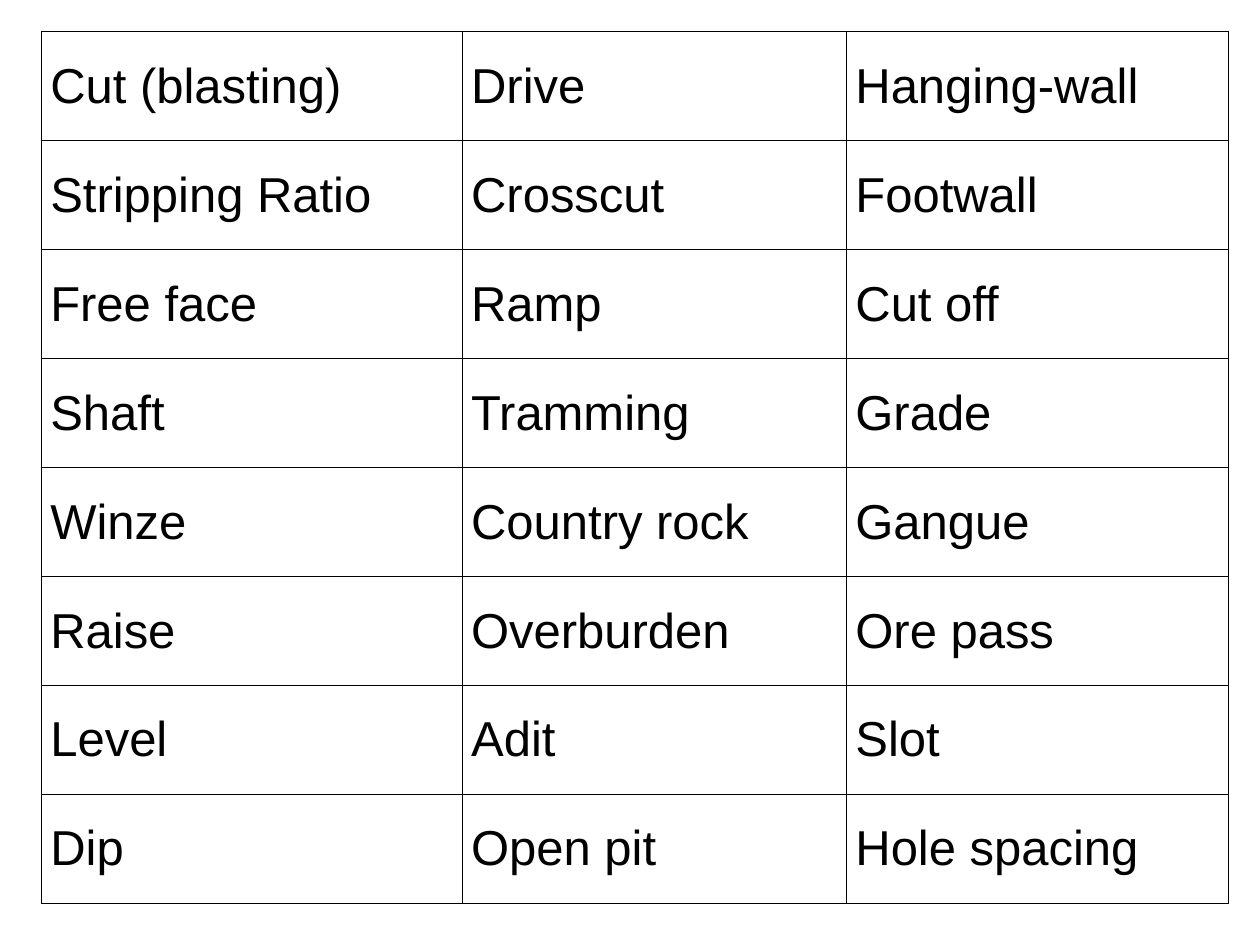
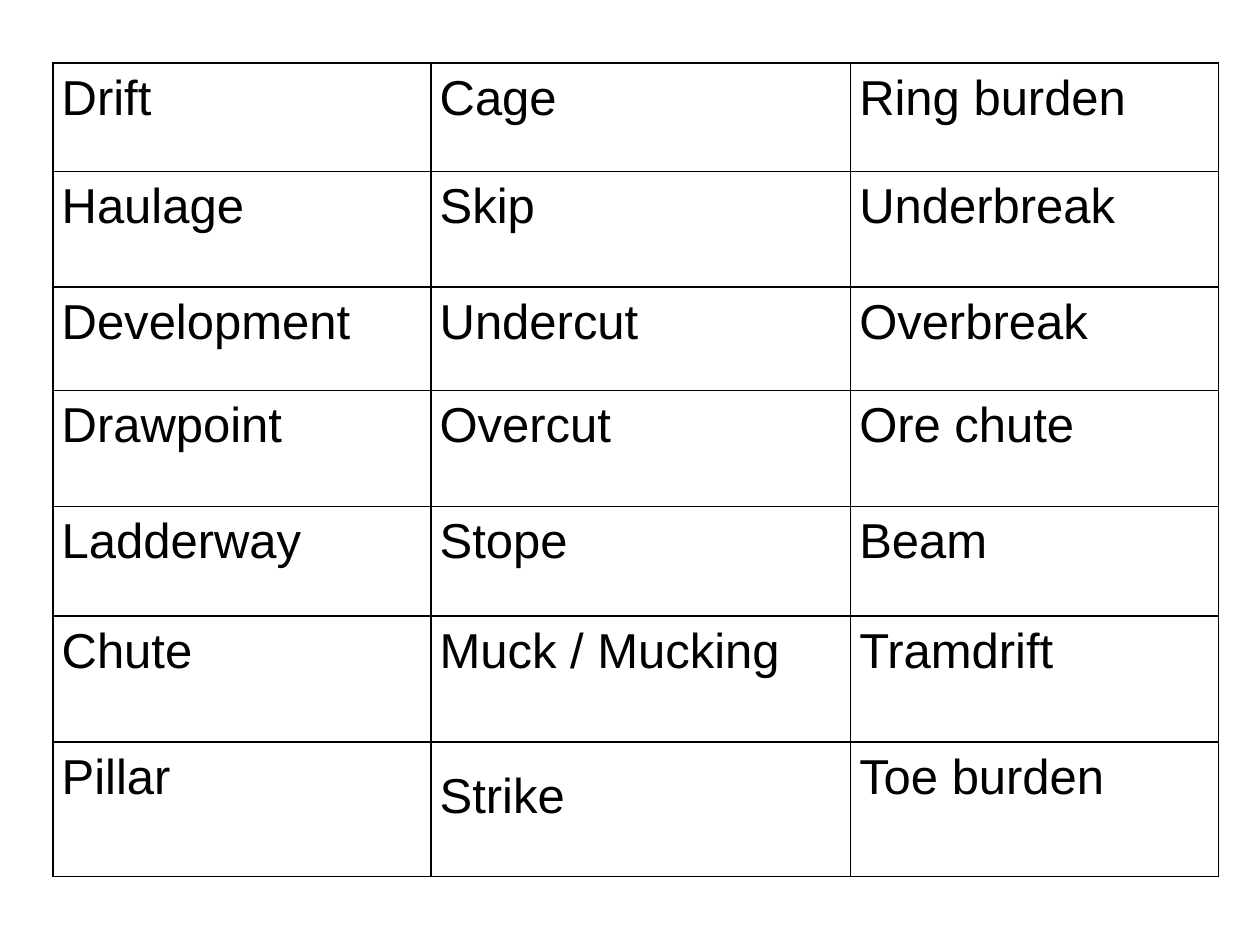
from dataclasses import dataclass

from lxml.etree import SubElement
from pptx import Presentation
from pptx.dml.color import RGBColor
from pptx.oxml.ns import qn
from pptx.util import Inches, Pt

GLOSSARIES = [
    {
        "left": 0.33, "top": 0.25, "spacing": 1.5,
        "columns": [3.34, 3.05, 3.03],
        "heights": [6.92 / 8] * 8,
        "terms": [
            ("Cut (blasting)", "Drive", "Hanging-wall"),
            ("Stripping Ratio", "Crosscut", "Footwall"),
            ("Free face", "Ramp", "Cut off"),
            ("Shaft", "Tramming", "Grade"),
            ("Winze", "Country rock", "Gangue"),
            ("Raise", "Overburden", "Ore pass"),
            ("Level", "Adit", "Slot"),
            ("Dip", "Open pit", "Hole spacing"),
        ],
        "spacing_by_term": {},
    },
    {
        "left": 0.42, "top": 0.5, "spacing": 1.15,
        "columns": [3, 3.33, 2.92],
        "heights": [0.86, 0.92, 0.82, 0.92, 0.87, 1, 1.07],
        "terms": [
            ("Drift", "Cage", "Ring burden"),
            ("Haulage", "Skip", "Underbreak"),
            ("Development", "Undercut", "Overbreak"),
            ("Drawpoint", "Overcut", "Ore chute"),
            ("Ladderway", "Stope", "Beam"),
            ("Chute", "Muck / Mucking", "Tramdrift"),
            ("Pillar", "Strike", "Toe burden"),
        ],
        "spacing_by_term": {"Strike": 1.5},
    },
]


@dataclass(frozen=True)
class Theme:
    font: str = "Arial"
    size: int = 28
    ink: str = "000000"
    paper: str = "FFFFFF"
    rule: float = 1
    inset: float = 0.07


THEME = Theme()


def draw_borders(cell):
    properties = cell._tc.get_or_add_tcPr()
    for side in ("lnL", "lnR", "lnT", "lnB"):
        border = SubElement(properties, qn(f"a:{side}"), w=str(Pt(THEME.rule)))
        SubElement(SubElement(border, qn("a:solidFill")), qn("a:srgbClr"), val=THEME.ink)


def write_term(cell, term, spacing):
    draw_borders(cell)
    cell.fill.background()
    cell.margin_left = cell.margin_right = Inches(THEME.inset)
    cell.margin_top = cell.margin_bottom = 0
    paragraph = cell.text_frame.paragraphs[0]
    paragraph.line_spacing = spacing
    run = paragraph.add_run()
    run.text = term
    run.font.name = THEME.font
    run.font.size = Pt(THEME.size)
    run.font.color.rgb = RGBColor.from_string(THEME.ink)


def add_glossary(slide, glossary):
    columns, heights, terms = (glossary[key] for key in ("columns", "heights", "terms"))
    table = slide.shapes.add_table(
        len(heights), len(columns),
        Inches(glossary["left"]), Inches(glossary["top"]),
        Inches(sum(columns)), Inches(sum(heights)),
    ).table
    table.first_row = table.horz_banding = False
    for column, width in zip(table.columns, columns):
        column.width = Inches(width)
    for row, height, row_terms in zip(table.rows, heights, terms):
        row.height = Inches(height)
        for cell, term in zip(row.cells, row_terms):
            spacing = glossary["spacing_by_term"].get(term, glossary["spacing"])
            write_term(cell, term, spacing)


def main():
    deck = Presentation()
    deck.slide_width, deck.slide_height = Inches(10), Inches(7.5)
    for glossary in GLOSSARIES:
        slide = deck.slides.add_slide(deck.slide_layouts[6])
        slide.background.fill.solid()
        slide.background.fill.fore_color.rgb = RGBColor.from_string(THEME.paper)
        add_glossary(slide, glossary)
    deck.save("out.pptx")


if __name__ == "__main__":
    main()
